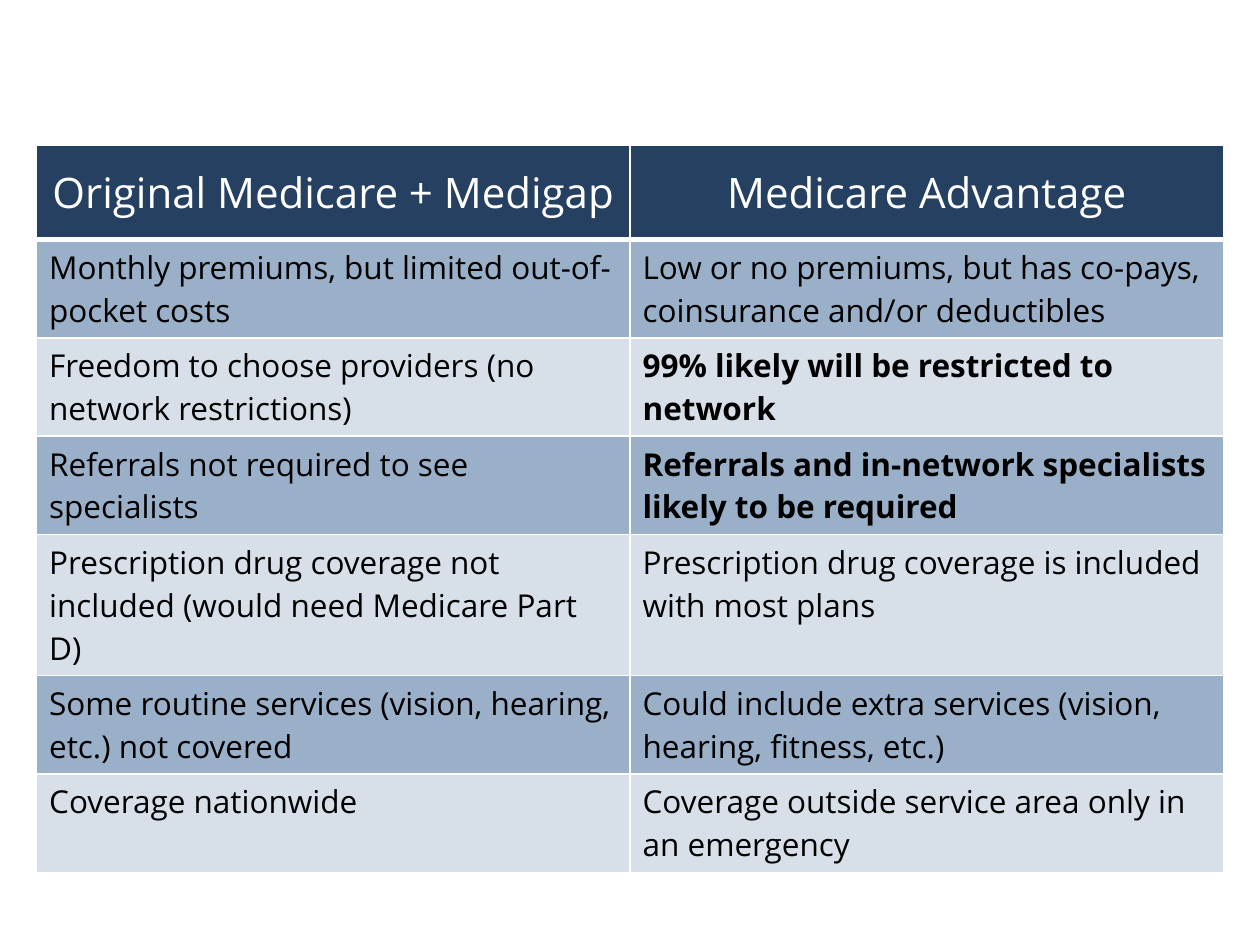
from dataclasses import dataclass

from lxml.etree import SubElement
from pptx import Presentation
from pptx.dml.color import RGBColor
from pptx.enum.text import MSO_ANCHOR, PP_ALIGN
from pptx.oxml.ns import qn
from pptx.util import Pt


@dataclass(frozen=True)
class Theme:
    font: str = "Open Sans"
    header_size: int = 24
    body_size: int = 18
    white: str = "FFFFFF"
    black: str = "000000"
    navy: str = "254061"
    blue: str = "376092"
    band_opacity: tuple = (50, 20)  # percent, alternating body rows
    rule: int = 1
    header_rule: int = 3


THEME = Theme()

HEADINGS = ("Original Medicare + Medigap", "Medicare Advantage")
COMPARISONS = [
    ("Monthly premiums, but limited out-of-pocket costs",
     "Low or no premiums, but has co-pays, coinsurance and/or deductibles"),
    ("Freedom to choose providers (no network restrictions)",
     "99% likely will be restricted to network"),
    ("Referrals not required to see specialists",
     "Referrals and in-network specialists likely to be required"),
    ("Prescription drug coverage not included (would need Medicare Part D)",
     "Prescription drug coverage is included with most plans"),
    ("Some routine services (vision, hearing, etc.) not covered",
     "Could include extra services (vision, hearing, fitness, etc.)"),
    ("Coverage nationwide",
     "Coverage outside service area only in an emergency"),
]
EMPHASIZED = {COMPARISONS[1][1], COMPARISONS[2][1]}


def set_borders(cell, widths):
    """Draw white rules; widths maps L, R, T and B to points."""
    properties = cell._tc.get_or_add_tcPr()
    for side, width in widths.items():
        line = SubElement(properties, qn(f"a:ln{side}"), w=str(Pt(width)))
        fill = SubElement(line, qn("a:solidFill"))
        SubElement(fill, qn("a:srgbClr"), val=THEME.white)


def set_fill(cell, color, opacity=100):
    cell.fill.solid()
    cell.fill.fore_color.rgb = RGBColor.from_string(color)
    if opacity < 100:
        shade = cell._tc.tcPr.find(qn("a:solidFill")).find(qn("a:srgbClr"))
        SubElement(shade, qn("a:alpha"), val=str(opacity * 1000))


def set_text(cell, text, size, color, bold=False):
    cell.text_frame.text = text
    font = cell.text_frame.paragraphs[0].runs[0].font
    font.name = THEME.font
    font.size = Pt(size)
    font.bold = bold
    font.color.rgb = RGBColor.from_string(color)


def add_plan_comparison(slide, left, top, width, height):
    frame = slide.shapes.add_table(
        len(COMPARISONS) + 1, len(HEADINGS),
        Pt(left), Pt(top), Pt(width), Pt(height))
    table = frame.table
    for column in table.columns:
        column.width = Pt(width / len(HEADINGS))
    for index, row in enumerate(table.rows):
        row.height = Pt(55.44 if index else 54)
    frame.height = Pt(height)

    rules = dict.fromkeys("LRTB", THEME.rule)

    # Header row
    for cell, heading in zip(table.rows[0].cells, HEADINGS):
        set_borders(cell, rules | {"B": THEME.header_rule})
        set_fill(cell, THEME.navy)
        set_text(cell, heading, THEME.header_size, THEME.white)
        cell.vertical_anchor = MSO_ANCHOR.MIDDLE
        cell.text_frame.paragraphs[0].alignment = PP_ALIGN.CENTER

    # Banded body rows
    for index, points in enumerate(COMPARISONS):
        for cell, point in zip(table.rows[index + 1].cells, points):
            set_borders(cell, rules)
            set_fill(cell, THEME.blue, THEME.band_opacity[index % 2])
            set_text(cell, point, THEME.body_size, THEME.black,
                     bold=point in EMPHASIZED)


def main():
    presentation = Presentation()
    presentation.slide_width = Pt(720)
    presentation.slide_height = Pt(540)
    slide = presentation.slides.add_slide(presentation.slide_layouts[6])
    add_plan_comparison(slide, left=20.88, top=82.8, width=678.24, height=429.84)
    presentation.save("out.pptx")


if __name__ == "__main__":
    main()
